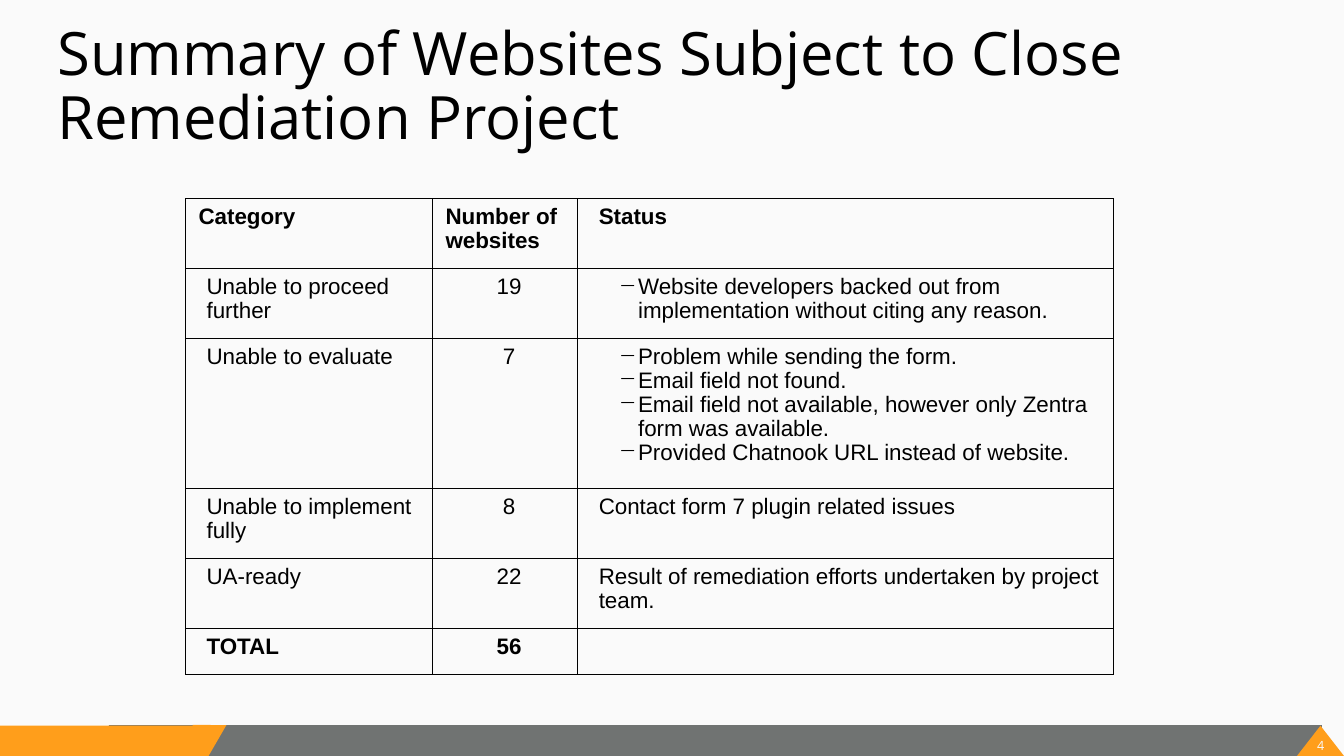
from typing import NamedTuple

from lxml.etree import SubElement
from pptx import Presentation
from pptx.dml.color import RGBColor
from pptx.enum.shapes import MSO_SHAPE
from pptx.enum.text import MSO_ANCHOR, PP_ALIGN
from pptx.oxml.ns import qn
from pptx.util import Inches, Pt

WIDTH, HEIGHT = Inches(13.33), Inches(7.5)
INK, PAPER, GREY, ORANGE = "000000", "FAFAFA", "707372", "FF9E1B"


class Box(NamedTuple):
    left: float
    top: float
    width: float
    height: float


class Panel(NamedTuple):
    kind: MSO_SHAPE
    box: Box
    fill: str
    turn: int = 0
    adjust: float | None = None


class Row(NamedTuple):
    height: float
    label: str
    count: str
    status: tuple[str, ...] = ()
    bold: bool = False
    listed: bool = False


PANELS = [
    Panel(MSO_SHAPE.RECTANGLE, Box(8.1, 95.9, 90.25, 4.1), GREY),
    Panel(MSO_SHAPE.RECTANGLE, Box(0, 96, 15, 4), ORANGE),
    Panel(MSO_SHAPE.ISOSCELES_TRIANGLE, Box(96.5, 96, 3.5, 4), ORANGE),
    Panel(MSO_SHAPE.PARALLELOGRAM, Box(13.35, 95.9, 3.5, 4.1), ORANGE, 180, 0.58),
    Panel(MSO_SHAPE.RECTANGLE, Box(14.33, 95.9, 1.35, 1.7), ORANGE),
]
COLUMNS = [18.38, 10.8, 39.84]
ROWS = [
    Row(9.25, "Category", "Number of websites", ("Status",), bold=True),
    Row(9.25, "Unable to proceed further", "19",
        ("Website developers backed out from implementation without citing any reason.",),
        listed=True),
    Row(19.9, "Unable to evaluate", "7",
        ("Problem while sending the form.",
         "Email field not found.",
         "Email field not available, however only Zentra form was available.",
         "Provided Chatnook URL instead of website."),
        listed=True),
    Row(9.25, "Unable to implement fully", "8", ("Contact form 7 plugin related issues",)),
    Row(9.25, "UA-ready", "22",
        ("Result of remediation efforts undertaken by project team.",)),
    Row(5.7, "TOTAL", "56", bold=True),
]


def across(share: float) -> int:
    return round(WIDTH * share / 100)


def down(share: float) -> int:
    return round(HEIGHT * share / 100)


def place(box: Box) -> tuple[int, int, int, int]:
    return across(box.left), down(box.top), across(box.width), down(box.height)


def paint(target, color: str) -> None:
    target.solid()
    target.fore_color.rgb = RGBColor.from_string(color)


def write(frame, *lines: str, size: float, font: str, color: str = INK,
          bold: bool = False, align=PP_ALIGN.LEFT, spacing: float = 1,
          indent: float = 0, hang: float = 0, bullet: str = "") -> None:
    frame.word_wrap = True
    for index, line in enumerate(lines):
        para = frame.add_paragraph() if index else frame.paragraphs[0]
        props = para._p.get_or_add_pPr()
        props.set("marL", str(Inches(indent)))
        props.set("indent", str(Inches(-hang)))
        if bullet:
            SubElement(props, qn("a:buChar"), char=bullet)
        para.alignment = align
        para.line_spacing = spacing
        run = para.add_run()
        run.text = line
        run.font.name = font
        run.font.size = Pt(size)
        run.font.bold = bold
        paint(run.font.fill, color)


def label(slide, box: Box, text: str, inset: tuple[float, float], **style) -> None:
    frame = slide.shapes.add_textbox(*place(box)).text_frame
    frame.margin_left = frame.margin_right = Inches(inset[0])
    frame.margin_top = frame.margin_bottom = Inches(inset[1])
    frame.vertical_anchor = MSO_ANCHOR.TOP
    write(frame, text, font="Open Sans", **style)


def draw(slide, panel: Panel) -> None:
    shape = slide.shapes.add_shape(panel.kind, *place(panel.box))
    shape.shadow.inherit = False
    shape.rotation = panel.turn
    if panel.adjust is not None:
        shape.adjustments[0] = panel.adjust
    paint(shape.fill, panel.fill)
    shape.line.fill.background()


def frame_cell(cell) -> None:
    props = cell._tc.get_or_add_tcPr()
    for side in ("a:lnL", "a:lnR", "a:lnT", "a:lnB"):
        line = SubElement(props, qn(side), w=str(Pt(0.75)))
        SubElement(SubElement(line, qn("a:solidFill")), qn("a:srgbClr"), val=INK)
    cell.fill.background()
    cell.margin_left = cell.margin_right = Inches(0.13)
    cell.margin_top, cell.margin_bottom = Inches(0.07), Inches(0.09)
    cell.vertical_anchor = MSO_ANCHOR.TOP


def tabulate(slide) -> None:
    box = Box(13.8, 26.25, sum(COLUMNS), sum(row.height for row in ROWS))
    table = slide.shapes.add_table(len(ROWS), len(COLUMNS), *place(box)).table
    table.first_row = table.horz_banding = False
    for column, width in zip(table.columns, COLUMNS):
        column.width = across(width)
    for index, row in enumerate(ROWS):
        table.rows[index].height = down(row.height)
        head = index == 0
        parts = [
            ((row.label,), {"indent": 0 if head else 0.08}),
            ((row.count,), {} if head else {"indent": 0.08, "align": PP_ALIGN.CENTER}),
            (row.status, {"indent": 0.47, "hang": 0.19, "bullet": "−"}
             if row.listed else {"indent": 0.08}),
        ]
        for cell, (lines, style) in zip(table.rows[index].cells, parts):
            frame_cell(cell)
            write(cell.text_frame, *lines, size=16, font="Arial",
                  bold=row.bold, spacing=0.96, **style)


def main() -> None:
    deck = Presentation()
    deck.slide_width, deck.slide_height = WIDTH, HEIGHT
    slide = deck.slides.add_slide(deck.slide_layouts[6])
    paint(slide.background.fill, PAPER)
    for panel in PANELS:
        draw(slide, panel)
    label(slide, Box(97.45, 97.6, 1.65, 2), "4", (0, 0),
          size=9, color=PAPER, align=PP_ALIGN.CENTER)
    label(slide, Box(3.53, 2.13, 92.42, 16.67),
          "Summary of Websites Subject to Close Remediation Project", (0.1, 0.08),
          size=42.7, spacing=0.89)
    tabulate(slide)
    deck.save("out.pptx")


if __name__ == "__main__":
    main()
